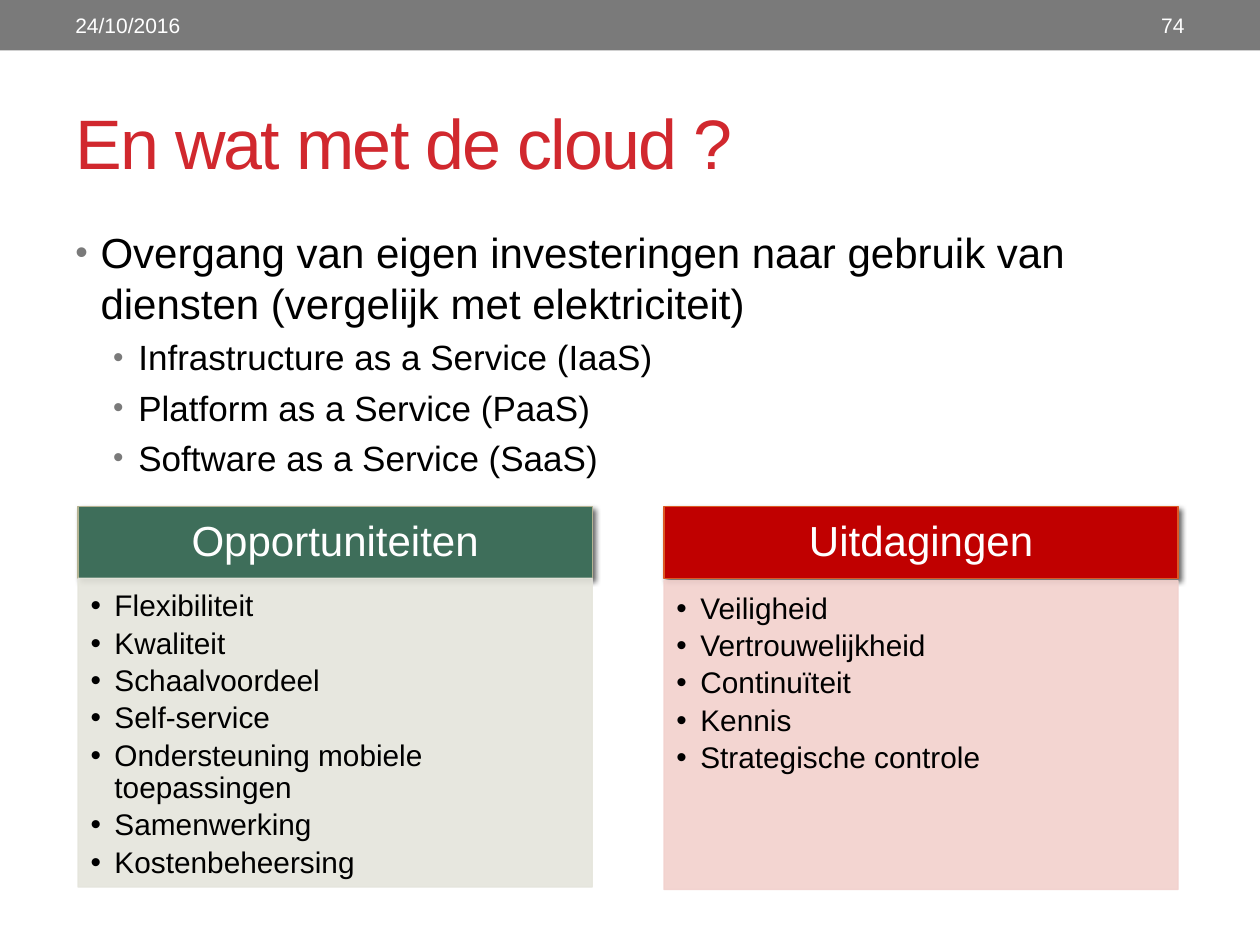
from lxml import etree
from pptx import Presentation, util as u
from pptx.dml.color import RGBColor
from pptx.enum import shapes, text
from pptx.oxml.ns import qn

COLORS = {
    "bar": "7A7A7A", "title": "D1282E", "ink": "000000", "white": "FFFFFF",
    "green": "3E6E5A", "green_edge": "B4B392", "green_tint": "E5E5DC",
    "red": "C00000", "red_edge": "DC5924", "red_tint": "F2D1CD",
}
LEFT, CENTER, RIGHT = text.PP_ALIGN.LEFT, text.PP_ALIGN.CENTER, text.PP_ALIGN.RIGHT
TOP, MIDDLE = text.MSO_ANCHOR.TOP, text.MSO_ANCHOR.MIDDLE


def add_xml(parent, tag, **attributes):
    return etree.SubElement(parent, qn(tag), {k: str(v) for k, v in attributes.items()})


class SlideStyle:
    """Draws styled elements on the current slide."""

    font = "Arial"

    def __init__(self, slide):
        self.slide = slide

    def color(self, name):
        return RGBColor.from_string(COLORS[name])

    def box(self, place, fill, edge=None, opacity=100, shadow=False):
        panel = self.slide.shapes.add_shape(
            shapes.MSO_SHAPE.RECTANGLE, *map(u.Inches, place))
        panel.shadow.inherit = False
        panel.fill.solid()
        panel.fill.fore_color.rgb = self.color(fill)
        if edge:
            panel.line.color.rgb = self.color(edge)
            panel.line.width = u.Pt(0.75)
        else:
            panel.line.fill.background()
        properties = panel.fill._xPr
        if opacity < 100:
            for tint in properties.iter(qn("a:srgbClr")):
                add_xml(tint, "a:alpha", val=opacity * 1000)
        if shadow:
            cast = add_xml(properties.find(qn("a:effectLst")), "a:outerShdw",
                           blurRad=u.Pt(3), dist=u.Pt(2), dir=45 * 60000,
                           algn="ctr", rotWithShape=0)
            shade = add_xml(cast, "a:srgbClr", val=COLORS["ink"])
            add_xml(shade, "a:alpha", val=60000)
        return panel

    def frame(self, shape, anchor=TOP, insets=(0.1, 0.05, 0.1, 0.05)):
        frame = shape.text_frame
        frame.word_wrap = True
        frame.vertical_anchor = anchor
        (frame.margin_left, frame.margin_top,
         frame.margin_right, frame.margin_bottom) = map(u.Inches, insets)
        return frame

    def textbox(self, place, anchor=TOP):
        return self.frame(self.slide.shapes.add_textbox(*map(u.Inches, place)), anchor)

    def paragraph(self, frame, words, size, color="ink", align=LEFT,
                  before=0, after=0, spacing=1.0, tracking=None):
        first = frame.paragraphs[0]
        line = first if not first.runs else frame.add_paragraph()
        line.alignment = align
        line.space_before, line.space_after = u.Pt(before), u.Pt(after)
        line.line_spacing = spacing
        run = line.add_run()
        run.text = words
        run.font.name, run.font.size = self.font, u.Pt(size)
        run.font.color.rgb = self.color(color)
        if tracking:
            run.font._element.set("spc", str(tracking))
        return line

    def bullet(self, line, indent, hang, color="ink", percent=100):
        properties = line._p.get_or_add_pPr()
        properties.set("marL", str(u.Inches(indent)))
        properties.set("indent", str(-u.Inches(hang)))
        add_xml(add_xml(properties, "a:buClr"), "a:srgbClr", val=COLORS[color])
        add_xml(properties, "a:buSzPct", val=percent * 1000)
        add_xml(properties, "a:buFont", typeface=self.font)
        add_xml(properties, "a:buChar", char="•")

    def column(self, left, list_top, heading, entries, hue):
        header = self.box((left, 4.02, 4.08, 0.57), hue, f"{hue}_edge", shadow=True)
        frame = self.frame(header, MIDDLE, (0.19, 0.11, 0.19, 0.11))
        self.paragraph(frame, heading, 24, "white", CENTER, spacing=0.9)
        tint = f"{hue}_tint"
        panel = self.box((left, list_top, 4.08, 2.45), tint, tint, opacity=90)
        frame = self.frame(panel, TOP, (0.1, 0.1, 0.13, 0.15))
        for entry in entries:
            line = self.paragraph(frame, entry, 17, after=3, spacing=0.9)
            self.bullet(line, 0.19, 0.19)


def main():
    deck = Presentation()
    deck.slide_width, deck.slide_height = u.Inches(10), u.Inches(7.5)
    style = SlideStyle(deck.slides.add_slide(deck.slide_layouts[6]))

    style.box((0, 0, 10, 0.4), "bar")
    title = style.textbox((0.5, 0.58, 9, 1.08), MIDDLE)
    style.paragraph(title, "En wat met de cloud ?", 40, "title", tracking=-100)

    services = style.textbox((0.5, 1.75, 9, 2.2))
    for words, size, indent in (
        ("Overgang van eigen investeringen naar gebruik van diensten "
         "(vergelijk met elektriciteit)", 24, 0.2),
        ("Infrastructure as a Service (IaaS)", 20, 0.5),
        ("Platform as a Service (PaaS)", 20, 0.5),
        ("Software as a Service (SaaS)", 20, 0.5),
    ):
        line = style.paragraph(services, words, size, before=size * 0.24)
        style.bullet(line, indent, 0.2, "bar", 85)

    date = style.textbox((0.5, 0.02, 3.17, 0.36), MIDDLE)
    style.paragraph(date, "24/10/2016", 12, "white")
    page = style.textbox((8.33, 0.02, 1.17, 0.36), MIDDLE)
    style.paragraph(page, "74", 12, "white", RIGHT)

    style.column(5.27, 4.61, "Uitdagingen", (
        "Veiligheid", "Vertrouwelijkheid", "Continuïteit", "Kennis",
        "Strategische controle"), "red")
    style.column(0.62, 4.59, "Opportuniteiten", (
        "Flexibiliteit", "Kwaliteit", "Schaalvoordeel", "Self-service",
        "Ondersteuning mobiele toepassingen", "Samenwerking",
        "Kostenbeheersing"), "green")
    deck.save("out.pptx")


if __name__ == "__main__":
    main()
